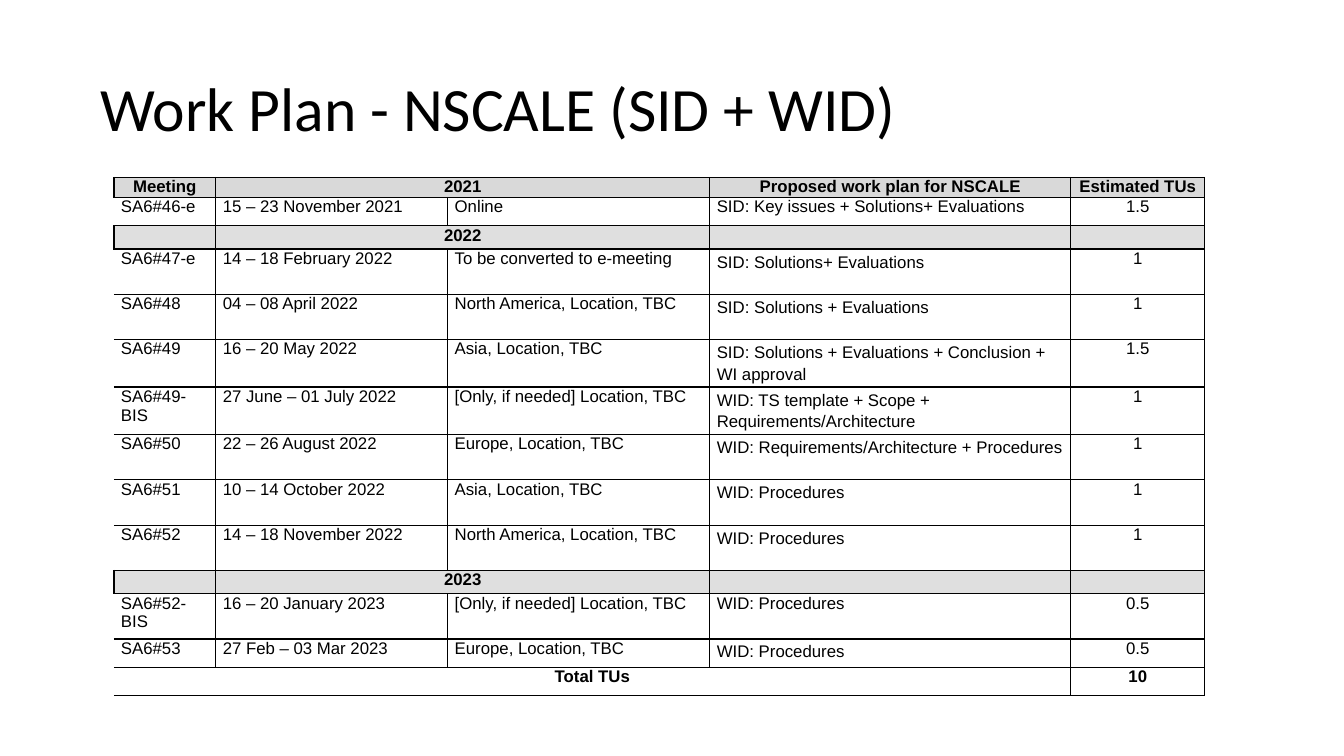
"""Build the NSCALE work plan slide with its meeting table."""
import pptx
import pptx.dml.color
import pptx.enum.text
import pptx.oxml
import pptx.oxml.ns
import pptx.util
from pptx.util import Inches, Pt


def style_font(font, size, name, bold=False, color="000000"):
    font.size = Pt(size)
    font.name = name
    font.bold = bold
    font.color.rgb = pptx.dml.color.RGBColor.from_string(color)


def add_border(cell, side, visible):
    fill = '<a:solidFill><a:srgbClr val="000000"/></a:solidFill>' if visible else "<a:noFill/>"
    ns = pptx.oxml.ns.nsdecls("a")
    line = pptx.oxml.parse_xml(f'<a:ln{side} {ns} w="{Pt(1)}">{fill}</a:ln{side}>')
    cell._tc.get_or_add_tcPr().append(line)


CENTER = pptx.enum.text.PP_ALIGN.CENTER
COL_WIDTHS = [1.01, 2.3, 2.6, 3.58, 1.33]
ROWS = [
    (0.19, ["Meeting", "2021", "", "Proposed work plan for NSCALE", "Estimated TUs"]),
    (0.28, ["SA6#46-e", "15 – 23 November 2021", "Online",
            "SID: Key issues + Solutions+ Evaluations", "1.5"]),
    (0.23, ["", "2022", "", "", ""]),
    (0.45, ["SA6#47-e", "14 – 18 February 2022", "To be converted to e-meeting",
            "SID: Solutions+ Evaluations", "1"]),
    (0.45, ["SA6#48", "04 – 08 April 2022", "North America, Location, TBC",
            "SID: Solutions + Evaluations", "1"]),
    (0.44, ["SA6#49", "16 – 20 May 2022", "Asia, Location, TBC",
            "SID: Solutions + Evaluations + Conclusion + WI approval", "1.5"]),
    (0.44, ["SA6#49-BIS", "27 June – 01 July 2022", "[Only, if needed] Location, TBC",
            "WID: TS template + Scope + Requirements/Architecture", "1"]),
    (0.45, ["SA6#50", "22 – 26 August 2022", "Europe, Location, TBC",
            "WID: Requirements/Architecture + Procedures", "1"]),
    (0.45, ["SA6#51", "10 – 14 October 2022", "Asia, Location, TBC", "WID: Procedures", "1"]),
    (0.45, ["SA6#52", "14 – 18 November 2022", "North America, Location, TBC",
            "WID: Procedures", "1"]),
    (0.23, ["", "2023", "", "", ""]),
    (0.45, ["SA6#52-BIS", "16 – 20 January 2023", "[Only, if needed] Location, TBC",
            "WID: Procedures", "0.5"]),
    (0.28, ["SA6#53", "27 Feb – 03 Mar 2023", "Europe, Location, TBC", "WID: Procedures", "0.5"]),
    (0.28, ["Total TUs", "", "", "", "10"]),
]
BAND_FILLS = {0: "D9D9D9", 2: "DFDFDF", 10: "DFDFDF"}
TOTAL_ROW = len(ROWS) - 1
LOOSE_ROWS = [*range(3, 10), 12]
PLAN_COL, TU_COL = 3, 4

prs = pptx.Presentation()
prs.slide_width = Inches(13.33)
prs.slide_height = Inches(7.5)
s = prs.slides.add_slide(prs.slide_layouts[6])

title = s.shapes.add_textbox(Inches(0.9), Inches(0.38), Inches(11.5), Inches(1.45))
tf = title.text_frame
tf.word_wrap = True
tf.vertical_anchor = pptx.enum.text.MSO_ANCHOR.MIDDLE
p = tf.paragraphs[0]
p.text = "Work Plan - NSCALE (SID + WID)"
p.line_spacing = 0.9
style_font(p.runs[0].font, 44, "Calibri")

table_height = sum(height for height, texts in ROWS)
table = s.shapes.add_table(len(ROWS), len(COL_WIDTHS), Inches(1.13), Inches(1.76),
                           Inches(sum(COL_WIDTHS)), Inches(table_height)).table
for column, width in zip(table.columns, COL_WIDTHS):
    column.width = Inches(width)
for i in BAND_FILLS:
    table.cell(i, 1).merge(table.cell(i, 2))
table.cell(TOTAL_ROW, 0).merge(table.cell(TOTAL_ROW, PLAN_COL))

for i, (height, texts) in enumerate(ROWS):
    table.rows[i].height = Inches(height)
    is_band = i in BAND_FILLS
    is_bold = is_band or i == TOTAL_ROW
    for j, text in enumerate(texts):
        cell = table.cell(i, j)
        if cell.is_spanned:
            continue
        is_loose = j == PLAN_COL and i in LOOSE_ROWS
        cell.margin_left = cell.margin_right = Inches(0.07)
        cell.margin_top = Inches(0.01 if is_loose and i < 10 else 0)
        cell.margin_bottom = 0
        for side in "LRTB":
            add_border(cell, side, side != "L" or j > 0 or is_band)
        cell.fill.solid()
        cell.fill.fore_color.rgb = pptx.dml.color.RGBColor.from_string(BAND_FILLS.get(i, "FFFFFF"))
        p = cell.text_frame.paragraphs[0]
        p.space_before = p.space_after = Pt(1)
        if is_loose:
            p.line_spacing = 1.15
        if is_bold or j == TU_COL:
            p.alignment = CENTER
        if text:
            p.text = text
            style_font(p.runs[0].font, 12, "Arial", is_bold)
        else:
            end = pptx.oxml.parse_xml(f'<a:endParaRPr {pptx.oxml.ns.nsdecls("a")} sz="1200"/>')
            p._p.append(end)

prs.save("out.pptx")
